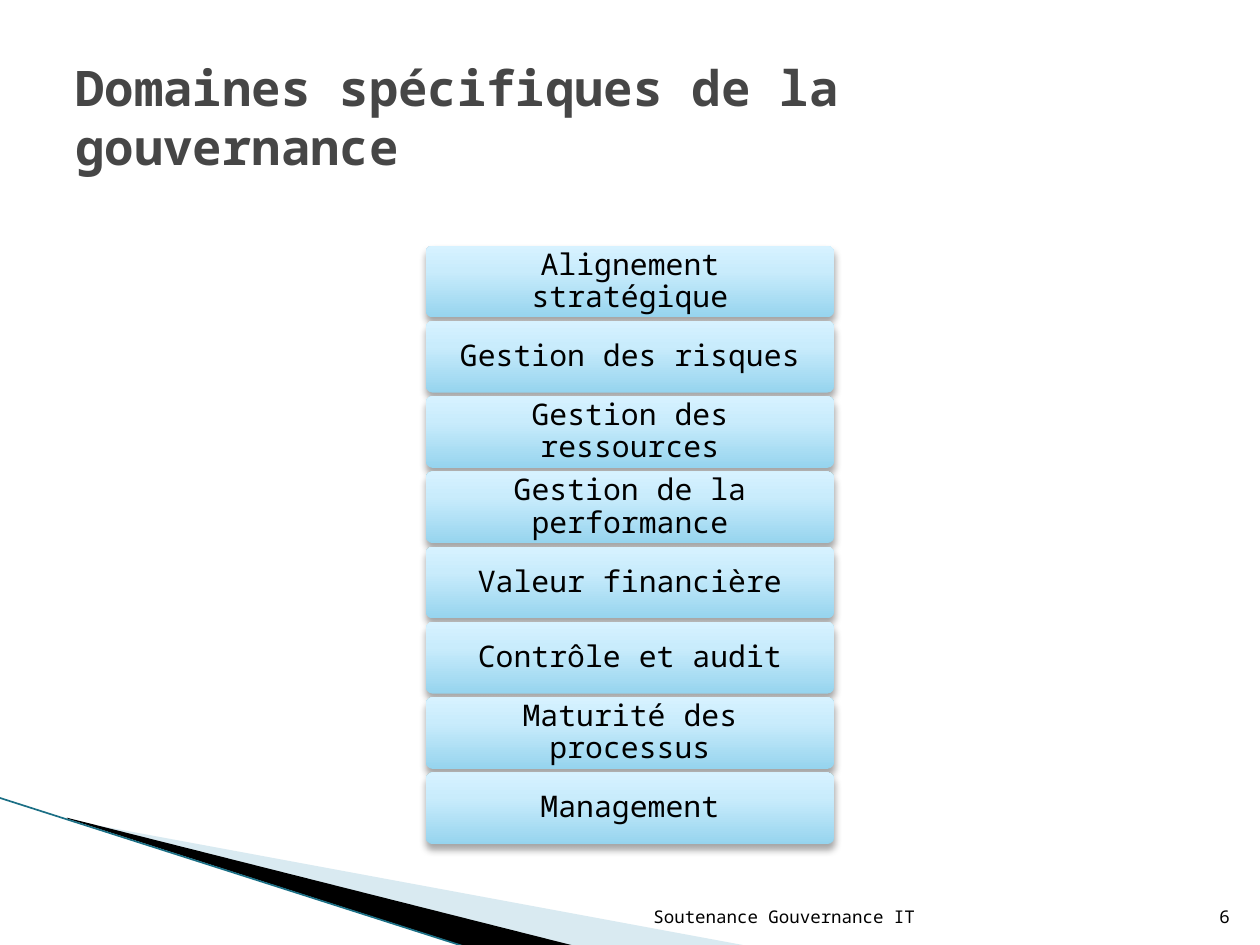
"""Build the slide on the specific domains of governance."""
from copy import deepcopy
from typing import NamedTuple

from lxml.etree import SubElement as Sub
from pptx import Presentation
from pptx.dml.color import RGBColor as Rgb
from pptx.enum.shapes import MSO_CONNECTOR as Conn, MSO_SHAPE as Kind
from pptx.enum.text import MSO_ANCHOR as Anchor, MSO_AUTO_SIZE as Auto, PP_ALIGN as Align
from pptx.oxml.ns import qn
from pptx.util import Pt

FONT = "Noto Sans Mono"
BLACK = Rgb(0x00, 0x00, 0x00)
GREY = Rgb(0x46, 0x46, 0x46)
PALE = Rgb(0xA0, 0xCB, 0xDC)
TEAL = Rgb(0x1B, 0x6F, 0x85)
SHADES = (
    (0, Rgb(0x96, 0xD4, 0xEE)),
    (0.65, Rgb(0xC9, 0xEC, 0xFC)),
    (1, Rgb(0xD7, 0xF2, 0xFF)),
)
DOMAINS = (
    "Alignement stratégique",
    "Gestion des risques",
    "Gestion des ressources",
    "Gestion de la performance",
    "Valeur financière",
    "Contrôle et audit",
    "Maturité des processus",
    "Management",
)
TOP, PITCH = 140.4, 43


class Box(NamedTuple):
    left: float
    top: float
    width: float
    height: float

    def place(self) -> list:
        return [Pt(side) for side in self]


class Wedge(NamedTuple):
    points: tuple
    color: Rgb
    alpha: int


class Note(NamedTuple):
    text: str
    box: Box


WEDGES = (
    Wedge(((39.6, 468.7), (428.4, 540.7), (328.3, 540.7), (39.6, 468)), PALE, 40),
    Wedge(((38.2, 467.3), (329, 540.7), (267.8, 541.4), (38.9, 468)), BLACK, 100),
)
NOTES = (
    Note("6", Box(681.1, 504.7, 28.8, 28.8)),
    Note("Soutenance Gouvernance IT", Box(344.9, 504.7, 185, 28.8)),
)


def write(shape, text: str, *, size: float, color: Rgb = BLACK, bold: bool = False,
          align=Align.LEFT, anchor=Anchor.MIDDLE, pad: tuple = (7.2, 3.6),
          lead: float = 1.0) -> None:
    frame = shape.text_frame
    frame.text = text
    frame.word_wrap = True
    frame.auto_size = Auto.NONE
    frame.vertical_anchor = anchor
    frame.margin_left = frame.margin_right = Pt(pad[0])
    frame.margin_top = frame.margin_bottom = Pt(pad[1])
    para = frame.paragraphs[0]
    para.alignment = align
    para.line_spacing = lead
    font = para.runs[0].font
    font.name, font.size, font.bold = FONT, Pt(size), bold
    font.color.rgb = color


def draw_wedge(shapes, wedge: Wedge) -> None:
    start, *rest = [(Pt(x), Pt(y)) for x, y in wedge.points]
    path = shapes.build_freeform(*start)
    path.add_line_segments(rest)
    shape = path.convert_to_shape()
    shape.shadow.inherit = False
    shape.line.fill.background()
    shape.fill.solid()
    shape.fill.fore_color.rgb = wedge.color
    if wedge.alpha < 100:
        tint = shape._element.spPr.find(f".//{qn('a:srgbClr')}")
        Sub(tint, qn("a:alpha"), val=str(wedge.alpha * 1000))


def draw_edge(shapes) -> None:
    ends = [Pt(n) for n in (-0.72, 455.76, 267.12, 541.44)]
    edge = shapes.add_connector(Conn.STRAIGHT, *ends)
    edge.line.color.rgb = TEAL
    edge.line.width = Pt(0.95)
    Sub(edge._element.spPr, qn("a:effectLst"))


def draw_domain(shapes, text: str, box: Box) -> None:
    shape = shapes.add_shape(Kind.ROUNDED_RECTANGLE, *box.place())
    shape.adjustments[0] = 0.1
    shape.line.fill.background()
    shape.fill.gradient()
    shape.fill.gradient_angle = 90
    props = shape._element.spPr
    stops = props.find(f".//{qn('a:gsLst')}")
    stops.append(deepcopy(stops[-1]))
    for stop, (place, color) in zip(shape.fill.gradient_stops, SHADES):
        stop.position = place
        stop.color.rgb = color
    shape.shadow.inherit = False
    shade = Sub(props.find(qn("a:effectLst")), qn("a:outerShdw"), blurRad=str(Pt(4)),
                dist=str(Pt(3)), dir="5400000", rotWithShape="0")
    tint = Sub(shade, qn("a:srgbClr"), val=str(BLACK))
    Sub(tint, qn("a:alpha"), val="35000")
    write(shape, text, size=17, align=Align.CENTER, pad=(5.04, 2.88), lead=0.9)


def main() -> None:
    deck = Presentation()
    deck.slide_width, deck.slide_height = Pt(720), Pt(540)
    slide = deck.slides.add_slide(deck.slide_layouts[5])
    shapes = slide.shapes
    for wedge in WEDGES:
        draw_wedge(shapes, wedge)
    draw_edge(shapes)
    for row, text in enumerate(DOMAINS):
        draw_domain(shapes, text, Box(243.36, TOP + row * PITCH, 233.28, 41.04))
    title = shapes.title
    title.left, title.top, title.width, title.height = Box(36, 21.6, 648, 90).place()
    write(title, "Domaines spécifiques de la gouvernance", size=28, color=GREY, bold=True)
    for note in NOTES:
        label = shapes.add_textbox(*note.box.place())
        write(label, note.text, size=10, align=Align.RIGHT, anchor=Anchor.BOTTOM)
    deck.save("out.pptx")


if __name__ == "__main__":
    main()
